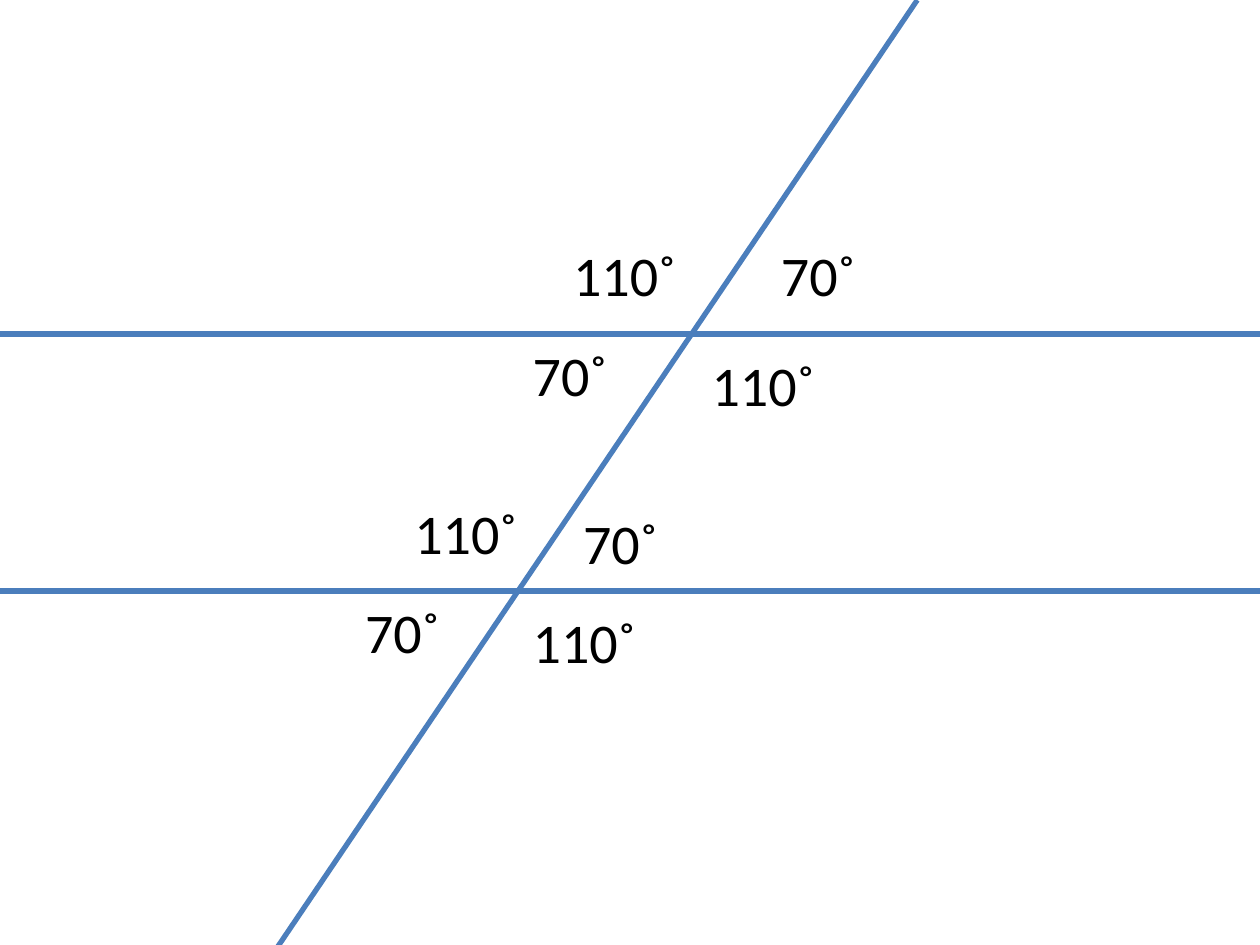
"""Draw two parallel lines cut by a transversal, with their angles labelled."""
from typing import NamedTuple

from lxml.etree import SubElement
from pptx import Presentation
from pptx.dml.color import RGBColor
from pptx.enum.shapes import MSO_CONNECTOR as Connector
from pptx.enum.text import MSO_AUTO_SIZE as AutoSize
from pptx.oxml.ns import qn
from pptx.slide import Slide
from pptx.util import Inches, Pt


class Line(NamedTuple):
    start_x: float
    start_y: float
    end_x: float
    end_y: float


class Angle(NamedTuple):
    degrees: int
    left: float
    top: float


LINE_COLOR = "4B7EBC"
TEXT_COLOR = "000000"
LABEL_HEIGHT = 0.64
LABEL_WIDTHS = {110: 1.03, 70: 0.8}

LINES = [
    Line(-1.46, 4.69, 11.22, 4.69),
    Line(-0.98, 2.65, 11.69, 2.65),
    Line(1.93, 7.92, 7.28, 0),
]
ANGLES = [
    Angle(110, 3.19, 3.91),
    Angle(110, 4.45, 1.86),
    Angle(110, 5.55, 2.73),
    Angle(110, 4.13, 4.77),
    Angle(70, 6.1, 1.86),
    Angle(70, 4.13, 2.65),
    Angle(70, 4.53, 3.99),
    Angle(70, 2.8, 4.69),
]


def paint(target, color: str) -> None:
    """Give a font or line format a solid colour."""
    target.fill.solid()
    target.fill.fore_color.rgb = RGBColor.from_string(color)


def draw_line(page: Slide, line: Line) -> None:
    """Draw one straight line without a shadow."""
    connector = page.shapes.add_connector(
        Connector.STRAIGHT, *(Inches(length) for length in line)
    )
    paint(connector.line, LINE_COLOR)
    connector.line.width = Pt(3)
    SubElement(connector._element.spPr, qn("a:effectLst"))


def draw_angle(page: Slide, angle: Angle) -> None:
    """Write the size of one angle."""
    box = page.shapes.add_textbox(
        Inches(angle.left),
        Inches(angle.top),
        Inches(LABEL_WIDTHS[angle.degrees]),
        Inches(LABEL_HEIGHT),
    )
    frame = box.text_frame
    frame.word_wrap = False
    frame.auto_size = AutoSize.SHAPE_TO_FIT_TEXT
    frame.text = f"{angle.degrees}˚"
    span = frame.paragraphs[0].runs[0]
    span.font.name = "Calibri"
    span.font.size = Pt(32)
    paint(span.font, TEXT_COLOR)


def main() -> None:
    """Build and save the deck."""
    deck = Presentation()
    deck.slide_width = Inches(10)
    deck.slide_height = Inches(7.5)
    page = deck.slides.add_slide(deck.slide_layouts[6])
    for line in LINES:
        draw_line(page, line)
    for angle in ANGLES:
        draw_angle(page, angle)
    deck.save("out.pptx")


if __name__ == "__main__":
    main()
